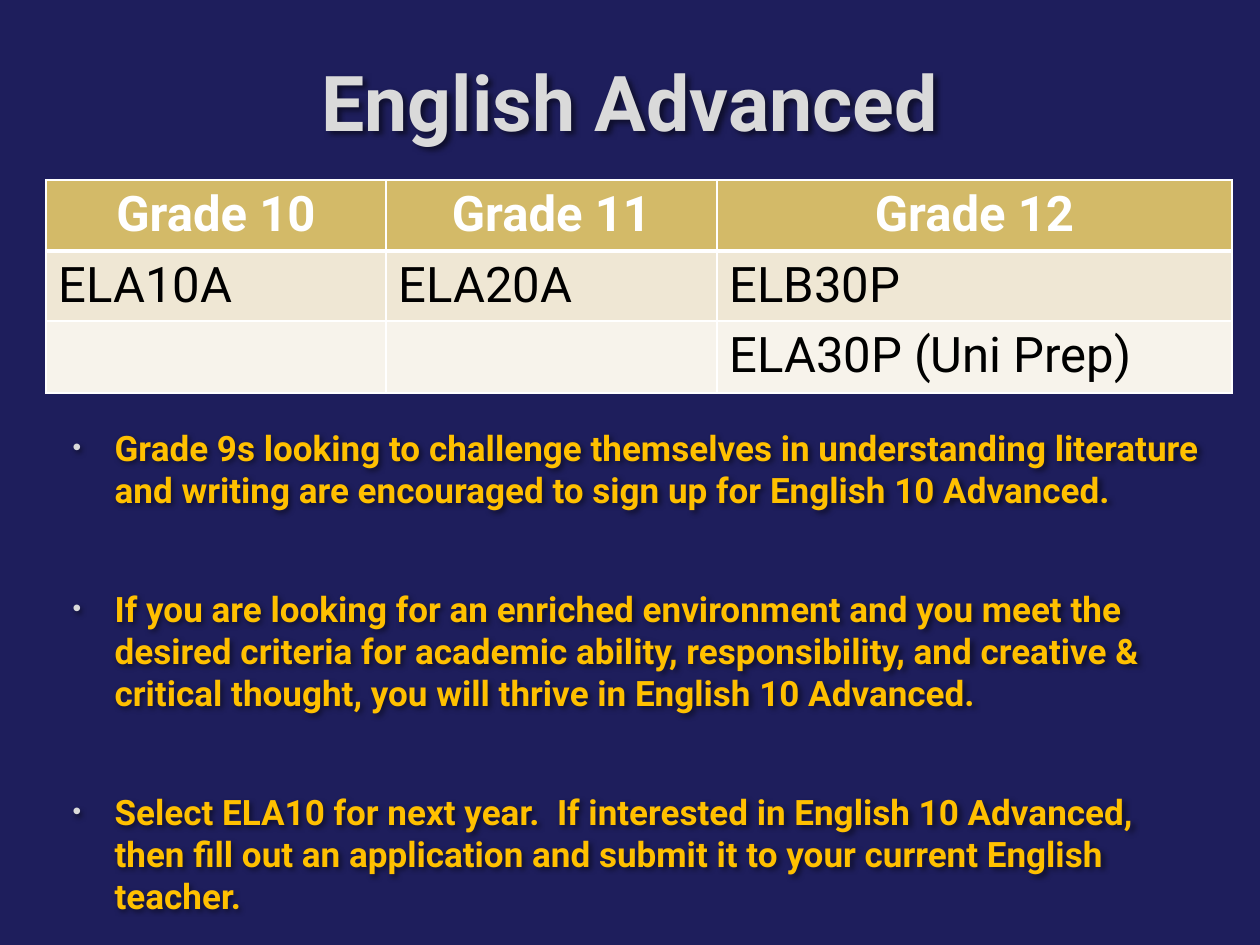
from typing import NamedTuple

from lxml.etree import SubElement
from pptx import Presentation
from pptx.dml.color import RGBColor
from pptx.enum.text import MSO_ANCHOR as Anchor, MSO_AUTO_SIZE as AutoSize, PP_ALIGN as Align
from pptx.oxml import parse_xml
from pptx.oxml.ns import nsdecls, qn
from pptx.util import Emu, Pt

PX_PER_INCH = 126
FONT = "Roboto"
COLORS = {
    "background": "1E1E5C", "title": "DADADA", "body": "FFC000", "outline": "404040",
    "header": "D3BA68", "odd_row": "EFE7D4", "even_row": "F7F3EB",
    "white": "FFFFFF", "black": "000000",
}


class Area(NamedTuple):
    left: int
    top: int
    width: int
    height: int


class RowStyle(NamedTuple):
    height: int
    fill: str
    text: str
    bold: bool
    align: Align
    top_line: int
    bottom_line: int


TITLE_AREA = Area(210, 22, 840, 157)
BODY_AREA = Area(54, 420, 1168, 503)
TABLE_AREA = Area(46, 180, 1186, 213)
COLUMN_WIDTHS = (340, 331, 515)
ROW_STYLES = (
    RowStyle(71, "header", "white", True, Align.CENTER, 1, 3),
    RowStyle(70, "odd_row", "black", False, Align.LEFT, 3, 1),
    RowStyle(72, "even_row", "black", False, Align.LEFT, 1, 1),
)
COURSES = (
    ("Grade 10", "Grade 11", "Grade 12"),
    ("ELA10A", "ELA20A", "ELB30P"),
    ("", "", "ELA30P (Uni Prep)"),
)
ADVICE = (
    "Grade 9s looking to challenge themselves in understanding literature and writing "
    "are encouraged to sign up for English 10 Advanced.",
    "If you are looking for an enriched environment and you meet the desired criteria for "
    "academic ability, responsibility, and creative & critical thought, you will thrive in "
    "English 10 Advanced.",
    "Select ELA10 for next year.  If interested in English 10 Advanced, then fill out an "
    "application and submit it to your current English teacher.",
)


def px(length: int) -> Emu:
    return Emu(round(length * 914400 / PX_PER_INCH))


def color(name: str) -> RGBColor:
    return RGBColor.from_string(COLORS[name])


def place(shape, area: Area) -> None:
    shape.left, shape.top, shape.width, shape.height = map(px, area)


def format_runs(paragraph, size: int, color_name: str, bold: bool) -> None:
    for span in paragraph.runs:
        span.font.name = FONT
        span.font.size = Pt(size)
        span.font.bold = bold
        span.font.color.rgb = color(color_name)


def add_outline(paragraph) -> None:
    for span in paragraph.runs:
        span.font._element.insert(0, parse_xml(
            f'<a:ln {nsdecls("a")} w="9525"><a:solidFill><a:srgbClr val="{COLORS["outline"]}">'
            '<a:alpha val="10000"/></a:srgbClr></a:solidFill></a:ln>'))


def add_shadow(shape) -> None:
    """Shadow an unfilled shape, so that its text casts the shadow."""
    shape._element.spPr.append(parse_xml(
        f'<a:effectLst {nsdecls("a")}><a:outerShdw blurRad="38100" dist="25400" dir="2700000">'
        f'<a:srgbClr val="{COLORS["black"]}"><a:alpha val="50000"/></a:srgbClr>'
        '</a:outerShdw></a:effectLst>'))


def add_bullet(paragraph) -> None:
    properties = paragraph._p.get_or_add_pPr()
    properties.set("marL", str(px(48)))
    properties.set("indent", str(px(-42)))
    bullet_color = SubElement(properties, qn("a:buClr"))
    SubElement(bullet_color, qn("a:srgbClr"), val=COLORS["title"])
    SubElement(properties, qn("a:buSzPct"), val="70000")
    SubElement(properties, qn("a:buChar"), char="•")


def fill_title(title) -> None:
    place(title, TITLE_AREA)
    add_shadow(title)
    frame = title.text_frame
    frame.text = "English Advanced"
    frame.vertical_anchor = Anchor.MIDDLE
    frame.auto_size = AutoSize.NONE
    paragraph = frame.paragraphs[0]
    paragraph.alignment = Align.CENTER
    format_runs(paragraph, 44, "title", True)
    add_outline(paragraph)


def fill_body(body) -> None:
    place(body, BODY_AREA)
    add_shadow(body)
    frame = body.text_frame
    frame.text = "\n".join(ADVICE)
    frame.word_wrap = True
    frame.auto_size = AutoSize.NONE
    for index, paragraph in enumerate(frame.paragraphs):
        add_bullet(paragraph)
        paragraph.space_before = Pt(38 if index else 0)
        paragraph.space_after = Pt(6)
        format_runs(paragraph, 20, "body", True)
        add_outline(paragraph)


def set_borders(cell, style: RowStyle) -> None:
    """Add the four border lines ahead of the cell's fill."""
    widths = {"lnL": 1, "lnR": 1, "lnT": style.top_line, "lnB": style.bottom_line}
    properties = cell._tc.get_or_add_tcPr()
    for index, (side, width) in enumerate(widths.items()):
        properties.insert(index, parse_xml(
            f'<a:{side} {nsdecls("a")} w="{Pt(width)}"><a:solidFill>'
            f'<a:srgbClr val="{COLORS["white"]}"/></a:solidFill></a:{side}>'))


def fill_cell(cell, text: str, style: RowStyle) -> None:
    cell.fill.solid()
    cell.fill.fore_color.rgb = color(style.fill)
    set_borders(cell, style)
    cell.text_frame.text = text
    paragraph = cell.text_frame.paragraphs[0]
    paragraph.alignment = style.align
    format_runs(paragraph, 28, style.text, style.bold)


def add_course_table(page) -> None:
    table = page.shapes.add_table(len(COURSES), len(COLUMN_WIDTHS), *map(px, TABLE_AREA)).table
    for column, width in zip(table.columns, COLUMN_WIDTHS):
        column.width = px(width)
    for row, texts, style in zip(table.rows, COURSES, ROW_STYLES):
        row.height = px(style.height)
        for cell, text in zip(row.cells, texts):
            fill_cell(cell, text, style)


def main() -> None:
    deck = Presentation()
    deck.slide_width, deck.slide_height = px(1260), px(945)
    page = deck.slides.add_slide(deck.slide_layouts[1])
    page.background.fill.solid()
    page.background.fill.fore_color.rgb = color("background")
    fill_title(page.shapes.title)
    fill_body(page.placeholders[1])
    add_course_table(page)
    deck.save("out.pptx")


if __name__ == "__main__":
    main()
